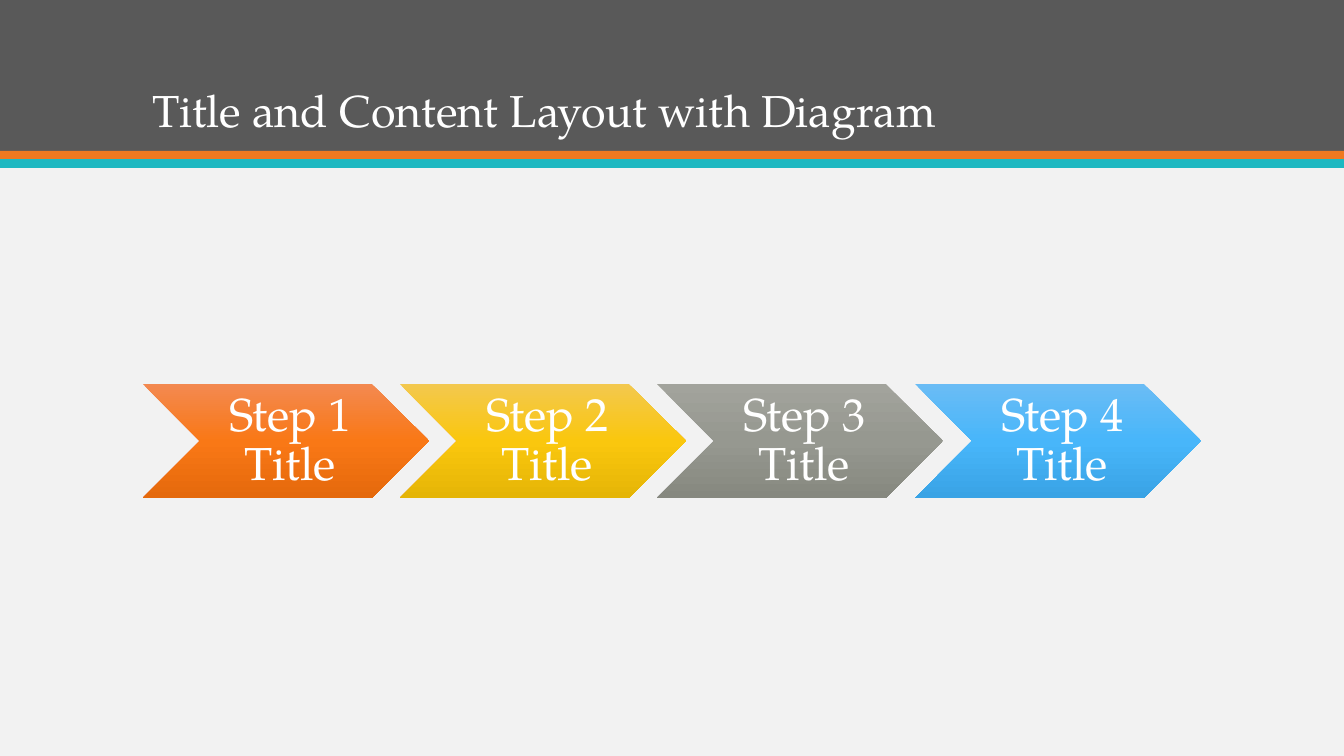
from copy import deepcopy
from pptx import Presentation
from pptx.dml.color import RGBColor
from pptx.enum.shapes import MSO_SHAPE
from pptx.enum.text import MSO_ANCHOR, MSO_AUTO_SIZE, PP_ALIGN
from pptx.oxml.ns import qn
from pptx.util import Pt

PX = 914400 / 100.8
RECT, CHEVRON = MSO_SHAPE.RECTANGLE, MSO_SHAPE.CHEVRON
LEFT, CENTER = PP_ALIGN.LEFT, PP_ALIGN.CENTER
MIDDLE, BOTTOM = MSO_ANCHOR.MIDDLE, MSO_ANCHOR.BOTTOM
NO_FIT = MSO_AUTO_SIZE.NONE

FONT = "TeX Gyre Pagella"
WHITE = RGBColor(0xFF, 0xFF, 0xFF)
PAPER = RGBColor(0xF2, 0xF2, 0xF2)
GRAY = RGBColor(0x59, 0x59, 0x59)
ORANGE = RGBColor(0xEF, 0x79, 0x20)
TEAL = RGBColor(0x1E, 0xB8, 0xC1)
STEP_COLORS = [
    (RGBColor(0xF3, 0x89, 0x50), RGBColor(0xF9, 0x78, 0x16), RGBColor(0xE5, 0x69, 0x0C)),
    (RGBColor(0xF3, 0xC8, 0x4E), RGBColor(0xFA, 0xC7, 0x0E), RGBColor(0xE5, 0xB5, 0x06)),
    (RGBColor(0xA2, 0xA3, 0x9C), RGBColor(0x96, 0x98, 0x90), RGBColor(0x86, 0x88, 0x7F)),
    (RGBColor(0x6A, 0xBC, 0xF5), RGBColor(0x48, 0xB6, 0xFA), RGBColor(0x39, 0xA3, 0xE5)),
]


def px(n):
    return round(n * PX)


def write(tf, text, size=32, align=LEFT, anchor=MIDDLE, insets=(10, 5, 10, 5)):
    tf.word_wrap = True
    tf.auto_size = NO_FIT
    tf.vertical_anchor = anchor
    tf.margin_left, tf.margin_top, tf.margin_right, tf.margin_bottom = map(px, insets)
    p = tf.paragraphs[0]
    p.alignment = align
    p.line_spacing = 0.9
    r = p.add_run()
    r.text = text
    r.font.name = FONT
    r.font.size = Pt(size)
    r.font.color.rgb = WHITE


prs = Presentation()
prs.slide_width, prs.slide_height = px(1344), px(756)
s = prs.slides.add_slide(prs.slide_layouts[5])
s.background.fill.solid()
s.background.fill.fore_color.rgb = PAPER

for top, height, color in [(0, 151, GRAY), (151, 8, ORANGE), (159, 9, TEAL)]:
    band = s.shapes.add_shape(RECT, 0, px(top), px(1344), px(height))
    band.shadow.inherit = False
    band.fill.solid()
    band.fill.fore_color.rgb = color
    band.line.fill.background()

title = s.shapes.title
title.left, title.top, title.width, title.height = px(143), px(28), px(1058), px(114)
write(title.text_frame, "Title and Content Layout with Diagram", anchor=BOTTOM)
s.shapes._spTree.append(title._element)

for i, colors in enumerate(STEP_COLORS):
    step = s.shapes.add_shape(CHEVRON, px(143 + i * 772 // 3), px(384), px(286), px(114))
    step.shadow.inherit = False
    step.line.fill.background()
    step.fill.gradient()
    step.fill.gradient_angle = 270
    stops = step._element.spPr.find(".//" + qn("a:gsLst"))
    stops.insert(1, deepcopy(stops[0]))
    for stop, position, color in zip(step.fill.gradient_stops, (0, 0.5, 1), colors):
        stop.position = position
        stop.color.rgb = color
    write(step.text_frame, f"Step {i + 1} Title", size=33, align=CENTER, insets=(14, 5, 5, 5))

prs.save("out.pptx")
